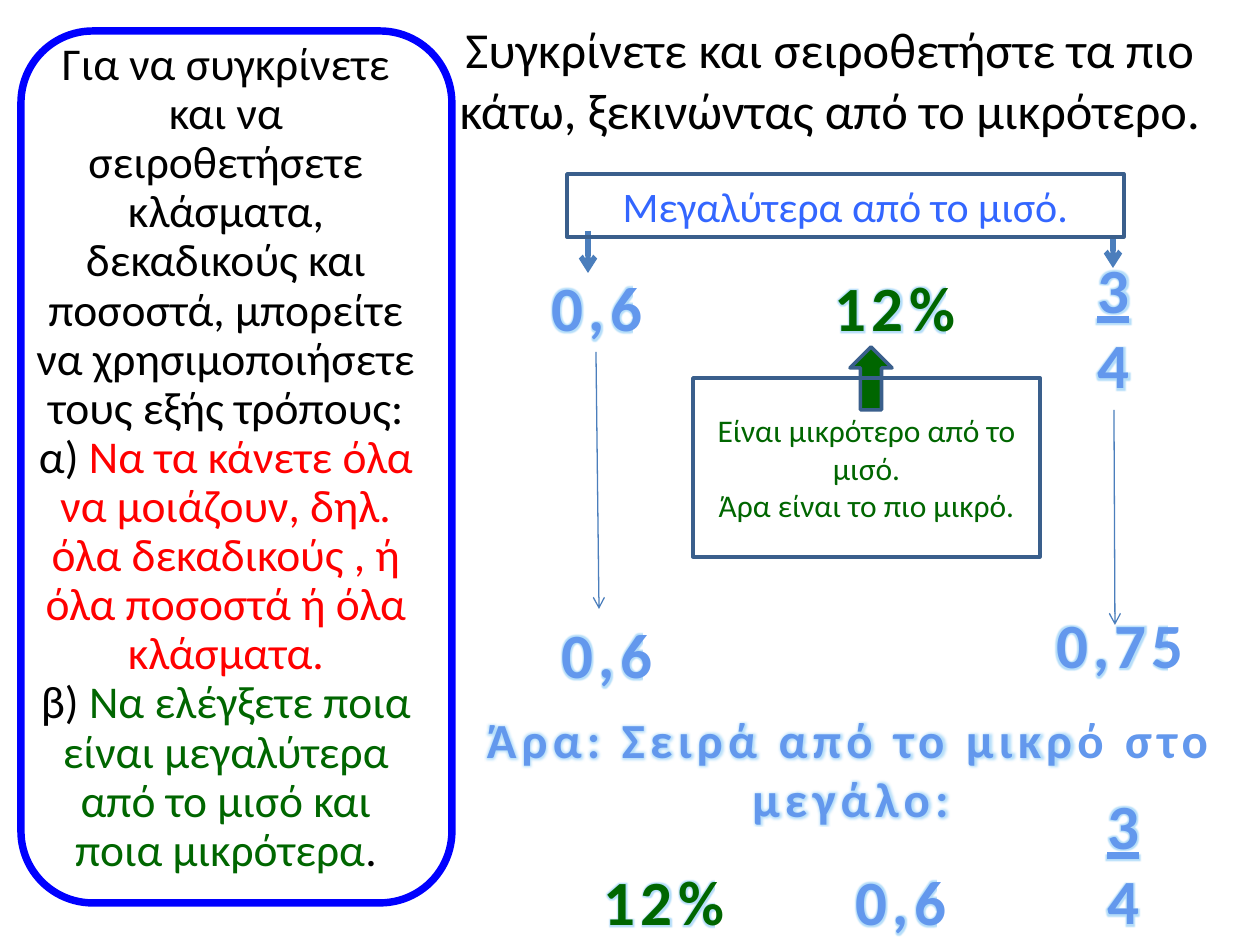
from dataclasses import dataclass

from lxml.etree import SubElement, fromstring
from pptx import Presentation
from pptx.dml.color import RGBColor
from pptx.enum.shapes import MSO_CONNECTOR, MSO_SHAPE
from pptx.enum.text import MSO_ANCHOR, MSO_AUTO_SIZE, PP_ALIGN
from pptx.oxml.ns import nsdecls, qn
from pptx.util import Pt

SCALE = 914400 / 126  # EMU in one px


@dataclass(frozen=True)
class Theme:
    font: str = "Calibri"
    black: str = "000000"
    red: str = "FF0000"
    green: str = "006600"
    blue: str = "3366FF"
    frame: str = "0000FF"
    edge: str = "3A5F8C"
    arrow: str = "4B7EBC"
    fade: tuple = (("6398ED", 0.1), ("265EA0", 0.75))
    rim: str = "F4F6F9"
    glow: str = "2AA0F0"
    title: float = 28.8
    body: int = 26
    big: int = 36
    sum: int = 28
    label: int = 24
    note: int = 18


def emu(*sizes):
    return [round(size * SCALE) for size in sizes]


def apply(item, **values):
    for name, value in values.items():
        setattr(item, name, value)


class Page:
    def __init__(self, deck, theme):
        self.theme = theme
        self.slide = deck.slides.add_slide(deck.slide_layouts[5])
        self.shapes = self.slide.shapes

    def fill_text(self, frame, lines, size, **form):
        """Each line is a list of (text, colour) runs; None is a line break."""
        frame.word_wrap = True
        runs = []
        for i, line in enumerate(lines):
            para = frame.paragraphs[0] if i == 0 else frame.add_paragraph()
            para.alignment = PP_ALIGN.CENTER
            for part in line:
                if part is None:
                    para.add_line_break()
                    continue
                run = para.add_run()
                run.text, tint = part
                apply(run.font, name=self.theme.font, size=Pt(size), **form)
                self.paint(run.font.fill, tint)
                runs.append(run)
        return runs

    def paint(self, fill, tint):
        if tint is None:
            fill.background()
        elif isinstance(tint, str):
            fill.solid()
            fill.fore_color.rgb = RGBColor.from_string(tint)
        else:
            fill.gradient()
            fill.gradient_angle = 270
            for stop, (shade, place) in zip(fill.gradient_stops, tint):
                stop.color.rgb = RGBColor.from_string(shade)
                stop.position = place

    def title(self, box, text):
        head = self.shapes.title
        apply(head, **dict(zip(("left", "top", "width", "height"), emu(*box))))
        head.text_frame.vertical_anchor = MSO_ANCHOR.MIDDLE
        self.fill_text(head.text_frame, [[(text, self.theme.black)]],
                       self.theme.title)

    def text(self, box, lines, size, **form):
        frame = self.shapes.add_textbox(*emu(*box)).text_frame
        return frame, self.fill_text(frame, lines, size, **form)

    def art(self, box, lines, tint, size, wrap=False):
        """Bold spaced lettering with a pale rim and a glow."""
        rows = [[(line, tint)] for line in lines]
        frame, runs = self.text(box, rows, size, bold=True)
        apply(frame, word_wrap=wrap, auto_size=MSO_AUTO_SIZE.SHAPE_TO_FIT_TEXT)
        for run in runs:
            props = run._r.get_or_add_rPr()
            props.set("spc", "300")
            props.insert(0, fromstring(
                f'<a:ln {nsdecls("a")} w="11430"><a:solidFill>'
                f'<a:srgbClr val="{self.theme.rim}"/></a:solidFill></a:ln>'))
            props.insert(2, fromstring(
                f'<a:effectLst {nsdecls("a")}><a:glow rad="45500">'
                f'<a:srgbClr val="{self.theme.glow}"><a:alpha val="35000"/>'
                '</a:srgbClr></a:glow></a:effectLst>'))
        return runs

    def ratio(self, box, top, base):
        runs = self.art(box, [top, base], self.theme.fade, self.theme.big)
        runs[0].font.underline = True

    def shape(self, kind, box, edge, width, fill=None):
        item = self.shapes.add_shape(kind, *emu(*box))
        item.shadow.inherit = False
        self.paint(item.fill, fill)
        self.paint(item.line.fill, edge)
        item.line.width = Pt(width)
        return item

    def label(self, box, lines, tint, size):
        item = self.shape(MSO_SHAPE.RECTANGLE, box, self.theme.edge, 2)
        item.text_frame.vertical_anchor = MSO_ANCHOR.MIDDLE
        self.fill_text(item.text_frame, [[(line, tint)] for line in lines], size)

    def arrow(self, ends, width):
        line = self.shapes.add_connector(MSO_CONNECTOR.STRAIGHT, *emu(*ends))
        self.paint(line.line.fill, self.theme.arrow)
        line.line.width = Pt(width)
        SubElement(line.get_or_add_ln(), qn("a:tailEnd"), type="arrow")
        SubElement(line._element.spPr, qn("a:effectLst"))


def main():
    deck = Presentation()
    deck.slide_width, deck.slide_height = emu(1260, 945)
    theme = Theme()
    page = Page(deck, theme)

    page.title((431, 0, 798, 158),
               "Συγκρίνετε και σειροθετήστε τα πιο κάτω, ξεκινώντας από το μικρότερο.")
    page.ratio((1082, 244, 63, 165), "3", "4")
    page.art((536, 262, 122, 89), ["0,6"], theme.fade, theme.big)
    page.art((819, 262, 152, 89), ["12%"], theme.green, theme.big)

    guide = [
        ("Για να συγκρίνετε και να σειροθετήσετε κλάσματα, δεκαδικούς και "
         "ποσοστά, μπορείτε να χρησιμοποιήσετε τους εξής τρόπους:", theme.black),
        None,
        ("α) ", theme.black),
        ("Να τα κάνετε όλα να μοιάζουν, δηλ. όλα δεκαδικούς , ή όλα ποσοστά "
         "ή όλα κλάσματα.", theme.red),
        None,
        ("β) ", theme.black),
        ("Να ελέγξετε ποια είναι μεγαλύτερα από το μισό και ποια μικρότερα",
         theme.green),
        (".", theme.black),
    ]
    frame, _ = page.text((21, 21, 410, 924), [guide], theme.body)
    apply(frame, vertical_anchor=MSO_ANCHOR.MIDDLE, margin_bottom=emu(55)[0])
    frame.paragraphs[0].line_spacing = 0.9
    page.shape(MSO_SHAPE.ROUNDED_RECTANGLE, (21, 31, 431, 872), theme.frame, 4.25)

    page.shape(MSO_SHAPE.UP_ARROW, (850, 347, 42, 63), theme.edge, 2, theme.green)
    page.label((693, 378, 347, 179),
               ["Είναι μικρότερο από το μισό.", "Άρα είναι το πιο μικρό."],
               theme.green, theme.note)
    for ends in ((588, 231, 588, 273), (1113, 237, 1113, 268)):
        page.arrow(ends, 3)
    page.label((567, 174, 557, 63), ["Μεγαλύτερα από το μισό."],
               theme.blue, theme.label)
    for ends in ((596, 352, 599, 609), (1114, 410, 1115, 625)):
        page.arrow(ends, 0.75)

    page.art((546, 609, 122, 89), ["0,6"], theme.fade, theme.big)
    page.art((1040, 599, 160, 89), ["0,75"], theme.fade, theme.big)
    page.art((462, 703, 777, 131), ["Άρα: Σειρά από το μικρό στο μεγάλο:"],
             theme.fade, theme.sum, wrap=True)
    page.art((588, 856, 152, 89), ["12%"], theme.green, theme.big)
    page.art((840, 856, 122, 89), ["0,6"], theme.fade, theme.big)
    page.ratio((1092, 780, 63, 165), "3", "4")

    deck.save("out.pptx")


if __name__ == "__main__":
    main()
